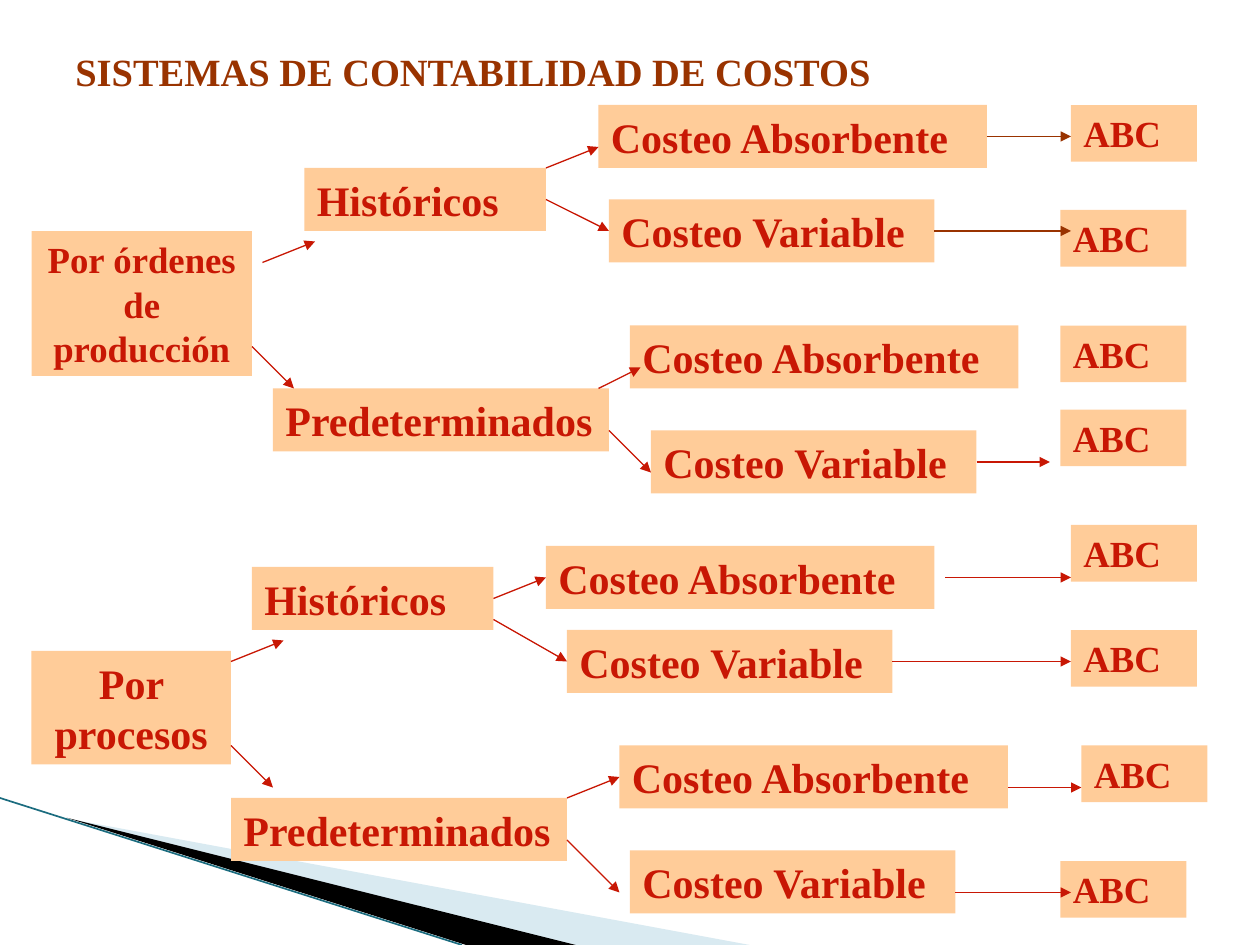
from lxml import etree
from pptx import Presentation
from pptx.dml.color import RGBColor
from pptx.enum.shapes import MSO_CONNECTOR, MSO_SHAPE
from pptx.enum.text import MSO_ANCHOR, PP_ALIGN
from pptx.oxml.ns import qn
from pptx.util import Inches, Pt

RECT = MSO_SHAPE.RECTANGLE
LINE = MSO_CONNECTOR.STRAIGHT
TOP = MSO_ANCHOR.TOP
LEFT, MID = PP_ALIGN.LEFT, PP_ALIGN.CENTER

PEACH = RGBColor(0xFF, 0xCC, 0x99)
RED = RGBColor(0xC8, 0x17, 0x04)
BROWN = RGBColor(0x99, 0x33, 0x00)
PALE = RGBColor(0xA0, 0xCB, 0xDC)
BLACK = RGBColor(0, 0, 0)
TEAL = RGBColor(0x1B, 0x6C, 0x7F)
FONT = "Times New Roman"

# The slide is a grid of 120 columns by 90 rows, 12 to the inch
CELL = Inches(1) / 12

# Text, width, height, size, alignment, then (column, row) of each box
BOXES = [
    ("Por órdenes de producción", 21, 13.8, 21, MID, [(3, 22)]),
    ("Por procesos", 19, 10.8, 24, MID, [(3, 62)]),
    ("Históricos", 23, 6, 24, LEFT, [(29, 16), (24, 54)]),
    ("Predeterminados", 32, 6, 24, LEFT, [(26, 37), (22, 76)]),
    ("Costeo Absorbente", 37, 6, 24, LEFT,
     [(57, 10), (60, 31), (52, 52), (59, 71)]),
    ("Costeo Variable", 31, 6, 24, LEFT,
     [(58, 19), (62, 41), (54, 60), (60, 81)]),
    ("ABC", 12, 5.4, 21, LEFT,
     [(102, 10), (101, 20), (101, 31), (101, 39),
      (102, 50), (102, 60), (103, 71), (101, 82)]),
]

# Start column and row, end column and row
ARROWS = [
    # from order and process costing
    (25, 25, 30, 23), (24, 33, 28, 37), (22, 63, 27, 61), (22, 71, 26, 75),
    # to absorption costing
    (52, 16, 57, 14), (57, 37, 61, 35), (47, 57, 52, 55), (54, 76, 59, 74),
    # to variable costing
    (52, 19, 58, 22), (58, 41, 62, 45), (47, 59, 54, 63), (54, 80, 59, 85),
    # to ABC
    (93, 44, 100, 44), (90, 55, 102, 55), (85, 63, 102, 63),
    (96, 75, 103, 75), (91, 85, 102, 85),
]
BROWN_ARROWS = [(94, 13, 102, 13), (89, 22, 102, 22)]


def cells(*nums):
    return [round(n * CELL) for n in nums]


def write(frame, text, size, color, align=LEFT):
    para = frame.paragraphs[0]
    para.text = text
    para.alignment = align
    font = para.font
    font.name, font.size, font.bold = FONT, Pt(size), True
    font.color.rgb = color


def add_box(slide, joins, text, size, align, col, row, wide, high):
    box = slide.shapes.add_shape(RECT, *cells(col, row, wide, high))
    box.shadow.inherit = False
    box.fill.solid()
    box.fill.fore_color.rgb = PEACH
    box.line.fill.background()
    box.text_frame.word_wrap = True
    box.text_frame.vertical_anchor = TOP
    write(box.text_frame, text, size, RED, align)
    # Middles of the left and right sides, where arrows may join
    joins[col, row + high / 2] = (box, 1)
    joins[col + wide, row + high / 2] = (box, 3)


def add_line(slide, ends, color, width):
    line = slide.shapes.add_connector(LINE, *ends)
    line.line.color.rgb = color
    line.line.width = Pt(width)
    etree.SubElement(line._element.spPr, qn("a:effectLst"))
    return line


def add_arrow(slide, joins, ends, color):
    arrow = add_line(slide, cells(*ends), color, 0.75)
    tail = etree.SubElement(arrow.line._get_or_add_ln(), qn("a:tailEnd"))
    tail.set("type", "triangle")
    if ends[:2] in joins:
        arrow.begin_connect(*joins[ends[:2]])
    if ends[2:] in joins:
        arrow.end_connect(*joins[ends[2:]])


def add_wedge(slide, points, color, alpha=None):
    # Points are in hundredths of an inch
    pen = slide.shapes.build_freeform(*points[0], scale=Inches(0.01))
    pen.add_line_segments(points[1:], close=True)
    wedge = pen.convert_to_shape()
    wedge.shadow.inherit = False
    wedge.line.fill.background()
    wedge.fill.solid()
    wedge.fill.fore_color.rgb = color
    if alpha:
        tint = wedge._element.spPr.find(".//" + qn("a:srgbClr"))
        etree.SubElement(tint, qn("a:alpha")).set("val", str(alpha * 1000))


def add_title(slide):
    spot = [Inches(n) for n in (0.5, 0.33, 6.54, 0.47)]
    frame = slide.shapes.add_textbox(*spot).text_frame
    frame.word_wrap = False
    write(frame, "SISTEMAS DE CONTABILIDAD DE COSTOS", 22, BROWN)


def main():
    deck = Presentation()
    deck.slide_width, deck.slide_height = cells(120, 90)
    slide = deck.slides.add_slide(deck.slide_layouts[6])

    # Corner decoration
    add_wedge(slide, [(55, 650), (595, 750), (456, 750)], PALE, 40)
    add_wedge(slide, [(53, 649), (457, 750), (370, 750)], BLACK)
    add_line(slide, cells(0, 76, 44, 90), TEAL, 0.95)

    # Title and boxes
    add_title(slide)
    joins = {}
    for text, wide, high, size, align, spots in BOXES:
        for col, row in spots:
            add_box(slide, joins, text, size, align, col, row, wide, high)

    # Arrows
    for color, group in ((RED, ARROWS), (BROWN, BROWN_ARROWS)):
        for ends in group:
            add_arrow(slide, joins, ends, color)

    deck.save("out.pptx")


if __name__ == "__main__":
    main()
